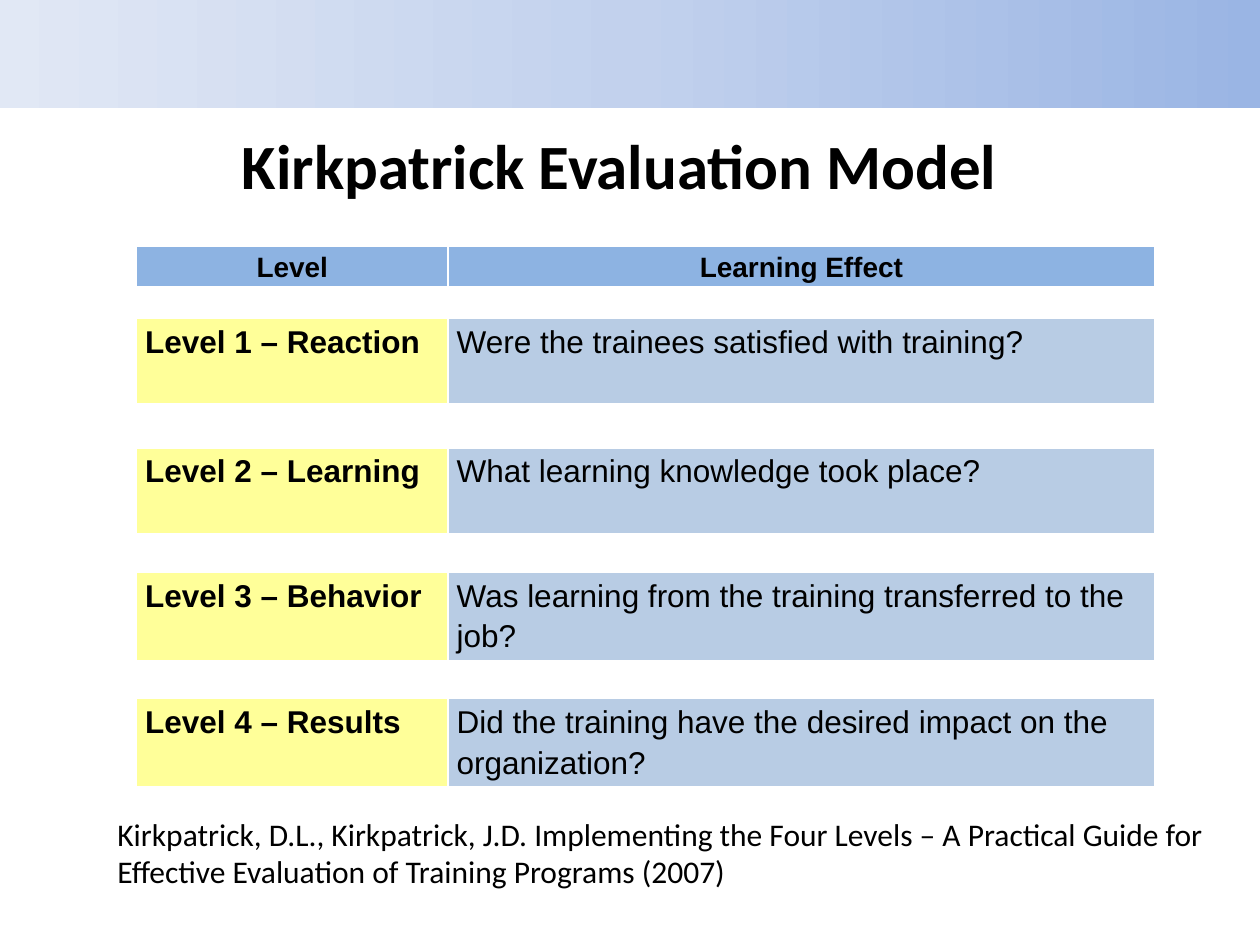
from copy import deepcopy
from dataclasses import dataclass

from lxml import etree
from pptx import Presentation
from pptx.dml.color import RGBColor
from pptx.enum import shapes, text
from pptx.oxml import ns
from pptx.util import Pt


@dataclass(frozen=True)
class Theme:
    ink: str = "000000"
    head: str = "8DB3E2"
    level: str = "FFFF99"
    effect: str = "B8CCE4"
    gap: str = "FFFFFF"
    band: tuple = ("9AB5E4", "C2D1ED", "E1E8F5")
    face: str = "Calibri"
    grid: str = "Arial"
    title: int = 36
    body: int = 18
    label: int = 16
    tiny: int = 8


THEME = Theme()
LEVELS = (
    ("Level 1 – Reaction", "Were the trainees satisfied with training?"),
    ("Level 2 – Learning", "What learning knowledge took place?"),
    ("Level 3 – Behavior", "Was learning from the training transferred to the job?"),
    ("Level 4 – Results", "Did the training have the desired impact on the organization?"),
)
SOURCE = ("Kirkpatrick, D.L., Kirkpatrick, J.D. Implementing the Four Levels – "
          "A Practical Guide for Effective Evaluation of Training Programs (2007)")


def apply(item, **values):
    for name, value in values.items():
        setattr(item, name, value)


def write(frame, words, face, size, bold=False, align=text.PP_ALIGN.LEFT, lead=1.0):
    para = frame.paragraphs[0]
    apply(para, alignment=align, line_spacing=lead)
    run = para.add_run()
    run.text = words
    apply(run.font, name=face, size=Pt(size), bold=bold)
    run.font.color.rgb = RGBColor.from_string(THEME.ink)


def add_band(slide, box):
    band = slide.shapes.add_shape(shapes.MSO_SHAPE.RECTANGLE, *map(Pt, box))
    band.shadow.inherit = False
    band.line.fill.background()
    band.fill.gradient()
    band.fill.gradient_angle = 180
    first = band.fill.gradient_stops[0]._gs
    first.addnext(deepcopy(first))
    for stop, place, shade in zip(band.fill.gradient_stops, (0, 0.5, 1), THEME.band):
        stop.position = place
        stop.color.rgb = RGBColor.from_string(shade)


def add_text(slide, box, words, size, **style):
    frame = slide.shapes.add_textbox(*map(Pt, box)).text_frame
    frame.word_wrap = True
    write(frame, words, THEME.face, size, **style)


def fill_cell(cell, shade, words="", **style):
    """Colour a cell; an empty one gets tiny type so that its row stays low."""
    apply(cell, margin_left=Pt(5), margin_right=Pt(5),
          margin_top=Pt(0.7), margin_bottom=Pt(0))
    cell.fill.solid()
    cell.fill.fore_color.rgb = RGBColor.from_string(shade)
    if words:
        write(cell.text_frame, words, THEME.grid, lead=1.15, **style)
    else:
        end = etree.SubElement(cell.text_frame.paragraphs[0]._p, ns.qn("a:endParaRPr"))
        end.set("sz", str(THEME.tiny * 100))


def add_levels(slide, box):
    heights = (23, 18, 49, 25, 49, 22, 50, 22, 50, 25, 25)
    table = slide.shapes.add_table(len(heights), 2, *map(Pt, box)).table
    apply(table, first_row=False, horz_banding=False)
    split = 178
    for column, width in zip(table.columns, (split, box[2] - split)):
        column.width = Pt(width)
    for row, height in zip(table.rows, heights):
        row.height = Pt(height)

    for col, words in enumerate(("Level", "Learning Effect")):
        fill_cell(table.cell(0, col), THEME.head, words, size=THEME.label,
                  bold=True, align=text.PP_ALIGN.CENTER)
    for row in range(1, len(heights)):
        item, gap = divmod(row - 2, 2)
        if gap or not 0 <= item < len(LEVELS):
            for cell in table.rows[row].cells:
                fill_cell(cell, THEME.gap)
            continue
        level, effect = LEVELS[item]
        fill_cell(table.cell(row, 0), THEME.level, level, size=THEME.body, bold=True)
        fill_cell(table.cell(row, 1), THEME.effect, effect, size=THEME.body)


def main():
    deck = Presentation()
    apply(deck, slide_width=Pt(720), slide_height=Pt(540))
    slide = deck.slides.add_slide(deck.slide_layouts[6])
    add_band(slide, (0, -1.5, 720, 63))
    add_text(slide, (30, 69, 648, 72), "Kirkpatrick Evaluation Model",
             THEME.title, bold=True, align=text.PP_ALIGN.CENTER)
    add_levels(slide, (78, 141, 582, 358))
    add_text(slide, (60, 462, 636, 51), SOURCE, THEME.body)
    deck.save("out.pptx")


if __name__ == "__main__":
    main()
